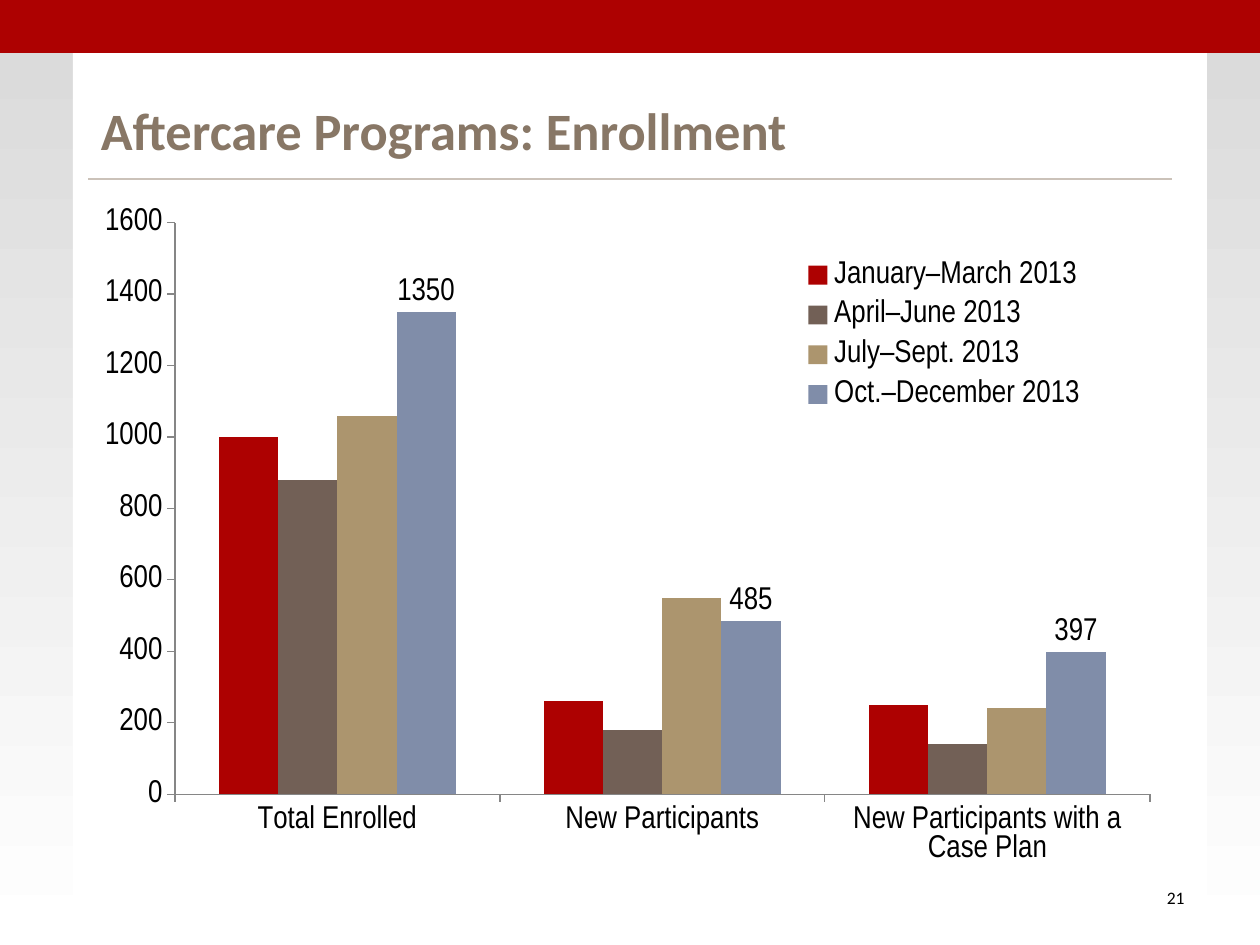
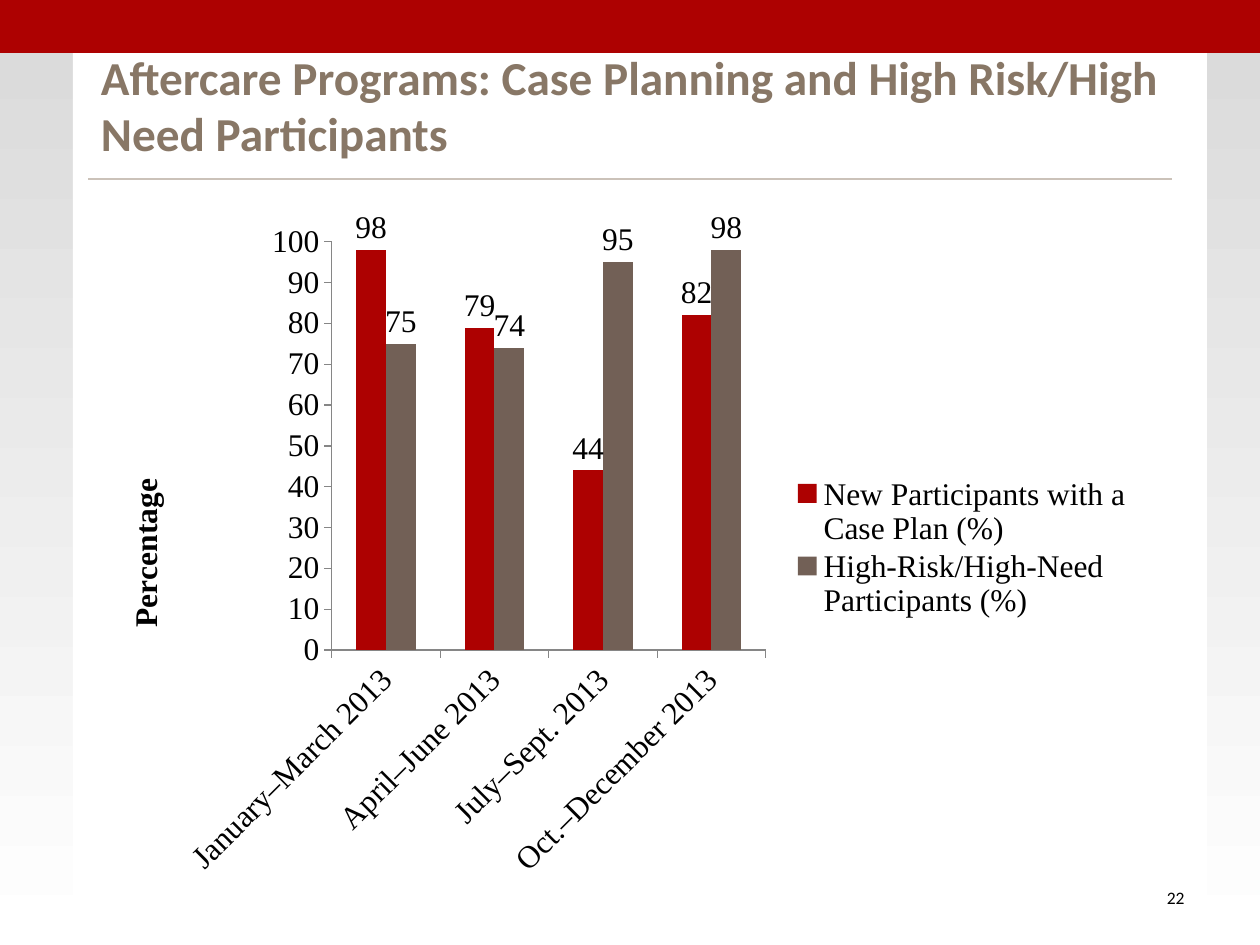
from lxml import etree
from pptx import Presentation
from pptx import util as u
from pptx.chart.data import CategoryChartData
from pptx.dml.color import RGBColor
from pptx.enum import chart as charts, shapes, text
from pptx.oxml.ns import qn

COLORS = {
    "red": "AD0101", "brown": "726056", "tan": "AC956E", "blue": "808DA9",
    "title": "887766", "rule": "CBC2B9", "axis": "868686",
    "gray": "D9D9D9", "white": "FFFFFF", "black": "000000",
}
QUARTERS = ["January–March 2013", "April–June 2013",
            "July–Sept. 2013", "Oct.–December 2013"]
SERIES_COLORS = ["red", "brown", "tan", "blue"]


def color(name):
    return RGBColor.from_string(COLORS[name])


def cm(*lengths):
    return [u.Cm(length) for length in lengths]


def set_layout(parent, index, inner=False, **fractions):
    """Place a chart part by fractions (x, y, w, h) of the chart area."""
    layout = parent.find(qn("c:layout"))
    if layout is None:
        layout = etree.Element(qn("c:layout"))
        parent.insert(index, layout)
    for child in list(layout):
        layout.remove(child)
    manual = etree.SubElement(layout, qn("c:manualLayout"))
    if inner:
        etree.SubElement(manual, qn("c:layoutTarget")).set("val", "inner")
    for key in ("x", "y"):
        etree.SubElement(manual, qn(f"c:{key}Mode")).set("val", "edge")
    for key, value in fractions.items():
        etree.SubElement(manual, qn(f"c:{key}")).set("val", str(value))


class ReportDeck:
    def __init__(self):
        self.deck = Presentation()
        self.deck.slide_width, self.deck.slide_height = cm(25.4, 19.05)
        self.layout = self.deck.slide_layouts[5]
        self.page = None

    def style_layout(self):
        """Move the shared background, panel, band and rule to the layout."""
        fill = self.layout.background.fill
        fill.gradient()
        fill.gradient_angle = 270
        for stop, name in zip(fill.gradient_stops, ("gray", "white")):
            stop.color.rgb = color(name)
        title = self.layout.placeholders[0]
        title.left, title.top, title.width, title.height = cm(1.78, 1.27, 21.84, 2.11)
        frame = [self.rectangle("white", 1.47, 1.07, 22.86, 17.98),
                 self.rectangle("red", 0, 0, 25.4, 1.07),
                 self.rule(1.78, 23.62, 3.61)]
        tree = title.element.getparent()
        for position, shape in enumerate(frame, start=2):
            tree.insert(position, shape.element)

    def add_page(self, title, size, number):
        first = self.page is None
        self.page = self.deck.slides.add_slide(self.layout)
        if first:
            self.style_layout()
        self.title(title, size)
        self.page_number(number)

    def rectangle(self, fill, *place):
        box = self.page.shapes.add_shape(shapes.MSO_SHAPE.RECTANGLE, *cm(*place))
        box.shadow.inherit = False
        box.fill.solid()
        box.fill.fore_color.rgb = color(fill)
        box.line.fill.background()
        return box

    def rule(self, left, right, top):
        line = self.page.shapes.add_connector(
            shapes.MSO_CONNECTOR.STRAIGHT, *cm(left, top, right, top))
        line.line.color.rgb = color("rule")
        line.line.width = u.Pt(1.25)
        etree.SubElement(line.element.spPr, qn("a:effectLst"))
        return line

    def set_text(self, box, words, size, ink, align, anchor, bold=False):
        frame = box.text_frame
        frame.text = words
        frame.word_wrap = True
        frame.auto_size = text.MSO_AUTO_SIZE.NONE
        frame.vertical_anchor = anchor
        para = frame.paragraphs[0]
        para.alignment = align
        font = para.runs[0].font
        font.name, font.size, font.bold = "Calibri", u.Pt(size), bold
        font.color.rgb = color(ink)

    def title(self, words, size):
        self.set_text(self.page.shapes.title, words, size, "title",
                      text.PP_ALIGN.LEFT, text.MSO_ANCHOR.BOTTOM, bold=True)

    def page_number(self, number):
        box = self.page.shapes.add_textbox(*cm(22.02, 17.58, 2.11, 1.02))
        self.set_text(box, str(number), 10, "black",
                      text.PP_ALIGN.RIGHT, text.MSO_ANCHOR.MIDDLE)

    def column_chart(self, place, font, categories, series, gap, axis_range,
                     number_format, plot_area, legend_area, labelled):
        data = CategoryChartData()
        data.categories = categories
        for name, values in series.items():
            data.add_series(name, values)
        chart = self.page.shapes.add_chart(
            charts.XL_CHART_TYPE.COLUMN_CLUSTERED, *cm(*place), data).chart
        chart.has_title = False
        chart.font.name, chart.font.size = font, u.Pt(18)
        chart.font.color.rgb = color("black")

        plot = chart.plots[0]
        plot.vary_by_categories = False
        plot.gap_width, plot.overlap = gap, 0
        for column, name in zip(plot.series, SERIES_COLORS):
            column.format.fill.solid()
            column.format.fill.fore_color.rgb = color(name)
            if column.name in labelled:
                labels = column.data_labels
                labels.show_value = True
                labels.number_format = "0"
                labels.number_format_is_linked = False
                labels.position = charts.XL_LABEL_POSITION.OUTSIDE_END

        for axis in (chart.category_axis, chart.value_axis):
            axis.has_major_gridlines = False
            axis.major_tick_mark = charts.XL_TICK_MARK.OUTSIDE
            axis.minor_tick_mark = charts.XL_TICK_MARK.NONE
            axis.format.line.color.rgb = color("axis")
            axis.tick_labels.font.size = u.Pt(18)
        scale = chart.value_axis
        scale.minimum_scale = 0
        scale.maximum_scale, scale.major_unit = axis_range
        scale.tick_labels.number_format = number_format
        scale.tick_labels.number_format_is_linked = False

        chart.has_legend = True
        chart.legend.position = charts.XL_LEGEND_POSITION.RIGHT
        chart.legend.include_in_layout = False
        for tag, index, area in (("plotArea", 0, plot_area), ("legend", 1, legend_area)):
            part = chart.element.find(".//" + qn(f"c:{tag}"))
            set_layout(part, index, inner=tag == "plotArea", **dict(zip("xywh", area)))
        return chart

    def value_title(self, chart, words, x, y):
        title = chart.value_axis.axis_title
        title.text_frame.text = words
        font = title.text_frame.paragraphs[0].runs[0].font
        font.name, font.size, font.bold = "Times New Roman", u.Pt(18), True
        font.color.rgb = color("black")
        element = chart.element.find(f".//{qn('c:valAx')}/{qn('c:title')}")
        set_layout(element, 1, x=x, y=y)
        self.rotate(element, -90)

    def rotate(self, element, degrees):
        body = element.find(".//" + qn("a:bodyPr"))
        body.set("rot", str(degrees * 60000))
        body.set("vert", "horz")


def main():
    report = ReportDeck()

    report.add_page("Aftercare Programs: Enrollment", 30, 21)
    enrollment = [[1000, 260, 250], [880, 180, 140], [1060, 550, 240], [1350, 485, 397]]
    report.column_chart(
        (1.78, 3.94, 21.84, 13.72), "Arial Narrow",
        ["Total Enrolled", "New Participants", "New Participants with a Case Plan"],
        dict(zip(QUARTERS, enrollment)), gap=150, axis_range=(1600, 200),
        number_format="###0", plot_area=(0.08, 0.04, 0.9, 0.84),
        legend_area=(0.65, 0.08, 0.28, 0.25), labelled=QUARTERS[-1:])

    report.add_page("Aftercare Programs: Case Planning and High Risk/High Need Participants",
                    27, 22)
    percentages = {
        "New Participants with a Case Plan (%)": [98, 79, 44, 82],
        "High-Risk/High-Need Participants (%)": [75, 74, 95, 98],
    }
    chart = report.column_chart(
        (1.78, 4.19, 21.34, 13.72), "Times New Roman", QUARTERS, percentages,
        gap=164, axis_range=(100, 10), number_format="0",
        plot_area=(0.23, 0.05, 0.41, 0.6),
        legend_area=(0.66, 0.39, 0.33, 0.22), labelled=percentages)
    report.rotate(chart.element.find(".//" + qn("c:catAx")), -45)
    report.value_title(chart, "Percentage", 0.03, 0.39)

    report.deck.save("out.pptx")


if __name__ == "__main__":
    main()
